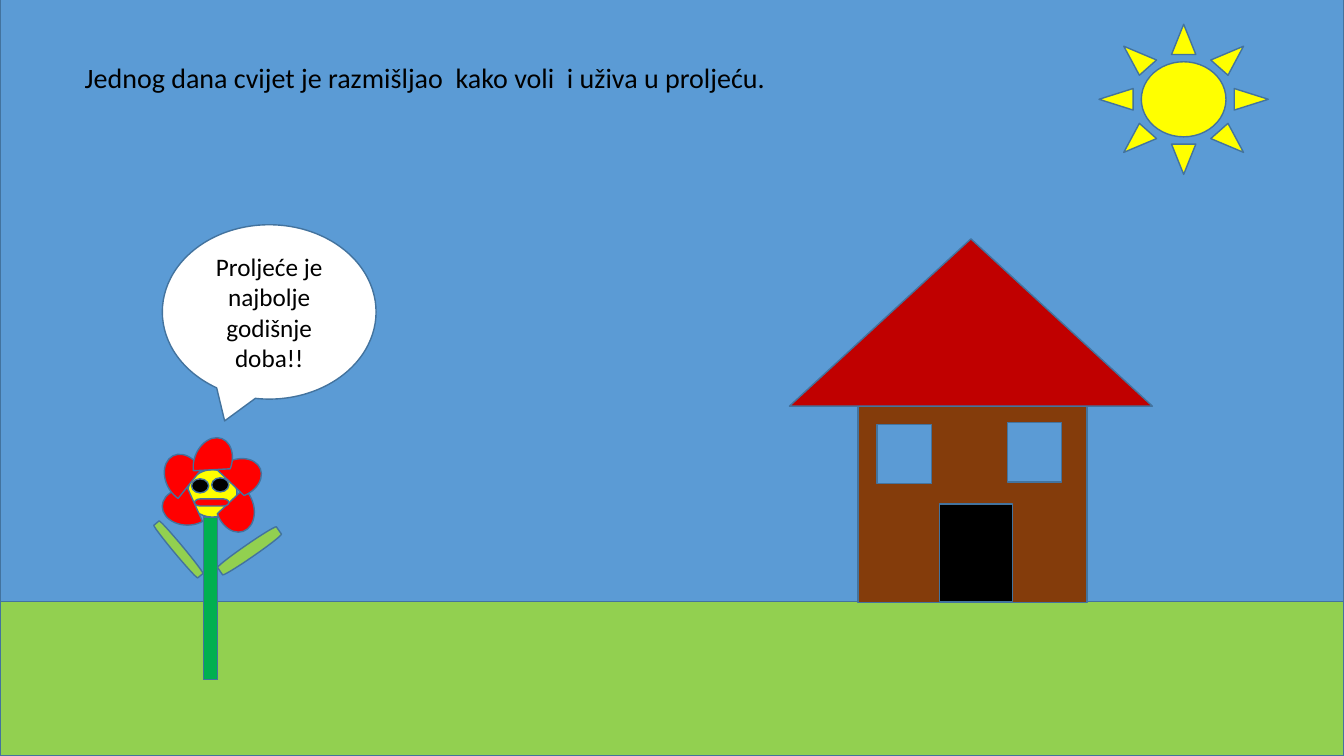
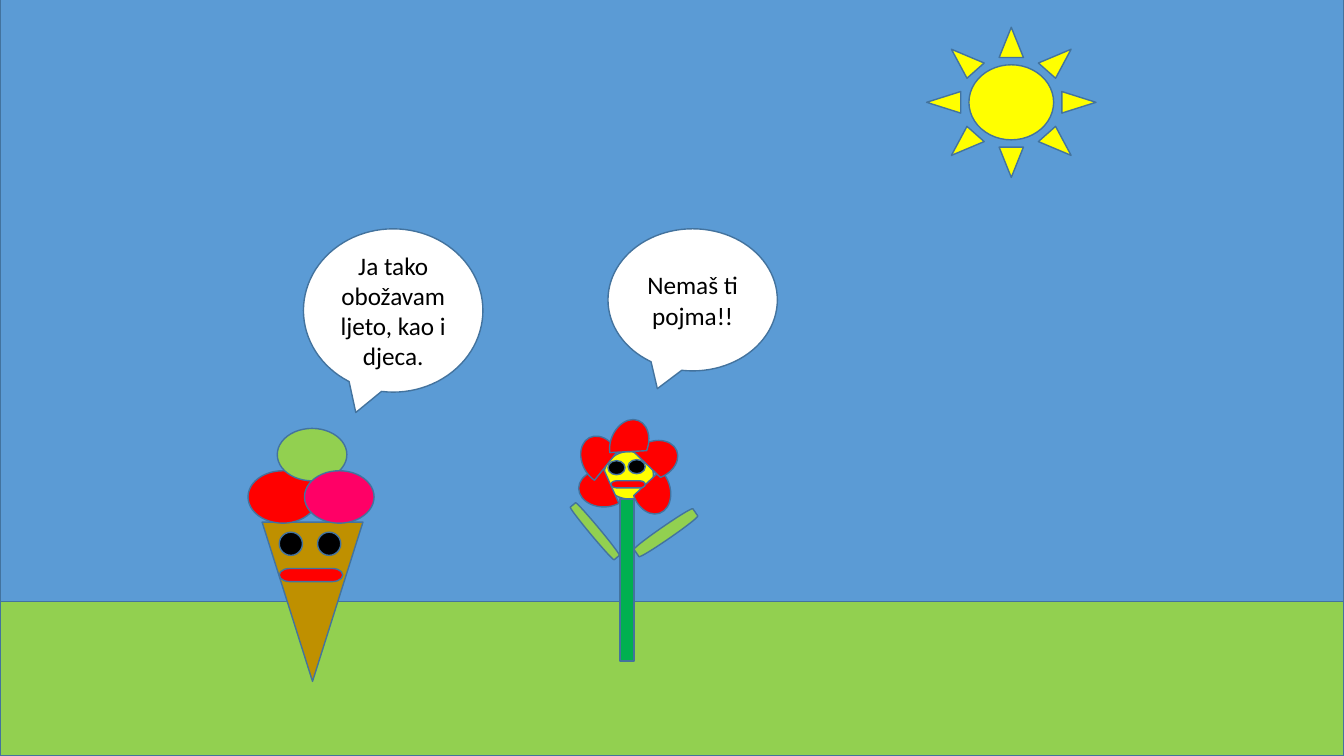
from dataclasses import dataclass

from pptx import Presentation
from pptx.dml.color import RGBColor as RGB
from pptx.enum.shapes import MSO_SHAPE as Geo
from pptx.enum.text import MSO_ANCHOR as Anchor, MSO_AUTO_SIZE as Fit, PP_ALIGN as Align
from pptx.util import Emu, Pt

PX = 9144  # EMU per px, 100 px to the inch


@dataclass(frozen=True)
class Theme:
    font: str = "Calibri"
    head: int = 20
    talk: int = 18
    edge: int = 1
    line: str = "43739E"
    sky: str = "5B9BD5"
    grass: str = "92D050"
    stem: str = "00B050"
    sun: str = "FFFF00"
    red: str = "FF0000"
    pink: str = "FF0066"
    cone: str = "BF9000"
    wall: str = "843C0B"
    roof: str = "C00000"
    black: str = "000000"
    white: str = "FFFFFF"


def px(n):
    return Emu(n * PX)


def write(frame, text, *, font, size, color, align=Align.LEFT, anchor=Anchor.TOP, fit=Fit.NONE):
    frame.word_wrap = True
    frame.auto_size = fit
    frame.vertical_anchor = anchor
    para = frame.paragraphs[0]
    para.alignment = align
    run = para.add_run()
    run.text = text
    run.font.name = font
    run.font.size = Pt(size)
    run.font.color.rgb = RGB.from_string(color)


class Story:
    def __init__(self, theme):
        self.look = theme
        self.deck = Presentation()
        self.deck.slide_width, self.deck.slide_height = px(1333), px(750)
        self.slide = None

    # Slide with ground, sky and sun
    def scene(self, sun, title=None):
        look = self.look
        layout = self.deck.slide_layouts[5 if title else 6]
        self.slide = self.deck.slides.add_slide(layout)
        self.shape(Geo.RECTANGLE, (0, 597, 1333, 153), look.grass)
        self.shape(Geo.RECTANGLE, (0, -4, 1333, 601), look.sky)
        self.shape(Geo.SUN, (*sun, 168, 149), look.sun)
        if title:
            self.title(title)

    def title(self, text):
        look, item = self.look, self.slide.shapes.title
        item.left, item.top, item.width, item.height = map(px, (74, 55, 709, 44))
        write(item.text_frame, text, font=look.font, size=look.head,
              color=look.black, fit=Fit.SHAPE_TO_FIT_TEXT)
        # Bring the title in front of the sky
        item.element.getparent().append(item.element)

    def shape(self, geo, box, fill, turn=0, host=None):
        host = host or self.slide
        item = host.shapes.add_shape(geo, *map(px, box))
        item.shadow.inherit = False
        item.fill.solid()
        item.fill.fore_color.rgb = RGB.from_string(fill)
        item.line.color.rgb = RGB.from_string(self.look.line)
        item.line.width = Pt(self.look.edge)
        item.rotation = turn
        return item

    # Group of parts, each placed from the group's corner
    def group(self, x, y, parts):
        host = self.slide.shapes.add_group_shape()
        for geo, (dx, dy, w, h), fill, *turn in parts:
            self.shape(geo, (x + dx, y + dy, w, h), fill, *turn, host=host)

    def bubble(self, box, text):
        look = self.look
        item = self.shape(Geo.OVAL_CALLOUT, box, look.white)
        write(item.text_frame, text, font=look.font, size=look.talk,
              color=look.black, align=Align.CENTER, anchor=Anchor.MIDDLE)

    def flower(self, x, y):
        look = self.look
        petals = [(3, 44, 0), (50, 45, 250.8), (52, 16, 157.7), (0, 16, 62.6), (28, 0, 111)]
        self.group(x, y, [
            (Geo.RECTANGLE, (44, 73, 14, 161), look.stem),
            (Geo.OVAL, (28, 26, 49, 47), look.sun),
            *((Geo.CHORD, (dx, dy, 50, 37), look.red, turn) for dx, dy, turn in petals),
            # Face
            *((Geo.OVAL, (dx, dy, 17, 14), look.black) for dx, dy in [(52, 34), (32, 35)]),
            (Geo.FLOWCHART_TERMINATOR, (35, 55, 34, 7), look.red),
            # Leaves
            (Geo.FLOWCHART_TERMINATOR, (83, 71, 13, 71), look.grass, 55.3),
            (Geo.FLOWCHART_TERMINATOR, (14, 71, 10, 68), look.grass, 320.2),
        ])

    def house(self, x, y):
        look = self.look
        self.group(x, y, [
            (Geo.RECTANGLE, (68, 166, 227, 195), look.wall),
            (Geo.RECTANGLE, (149, 263, 72, 97), look.black),
            (Geo.ISOSCELES_TRIANGLE, (0, 0, 360, 166), look.roof),
            *((Geo.RECTANGLE, (dx, dy, 54, 59), look.sky) for dx, dy in [(87, 184), (216, 182)]),
        ])

    def cone(self, x, y):
        look = self.look
        scoops = [(0, 42, look.red), (29, 0, look.grass), (56, 42, look.pink)]
        self.group(x, y, [
            (Geo.FLOWCHART_MERGE, (14, 93, 100, 158), look.cone),
            *((Geo.OVAL, (dx, dy, 69, 52), fill) for dx, dy, fill in scoops),
            # Face
            *((Geo.OVAL, (dx, 103, 23, 23), look.black) for dx in (31, 69)),
            (Geo.FLOWCHART_TERMINATOR, (31, 139, 63, 13), look.red),
        ])


def main():
    tale = Story(Theme())

    # Slide 1: the flower by the house
    tale.scene((1090, 24), "Jednog dana cvijet je razmišljao  kako voli  i uživa u proljeću.")
    tale.flower(158, 440)
    tale.bubble((161, 223, 212, 173), "Proljeće je najbolje godišnje doba!!")
    tale.house(783, 237)

    # Slide 2: the ice cream and the flower
    tale.scene((919, 27))
    tale.flower(571, 422)
    tale.cone(246, 425)
    tale.bubble((301, 227, 178, 162), "Ja tako obožavam ljeto, kao i djeca.")
    tale.bubble((603, 227, 168, 141), "Nemaš ti pojma!!")

    tale.deck.save("out.pptx")


if __name__ == "__main__":
    main()
